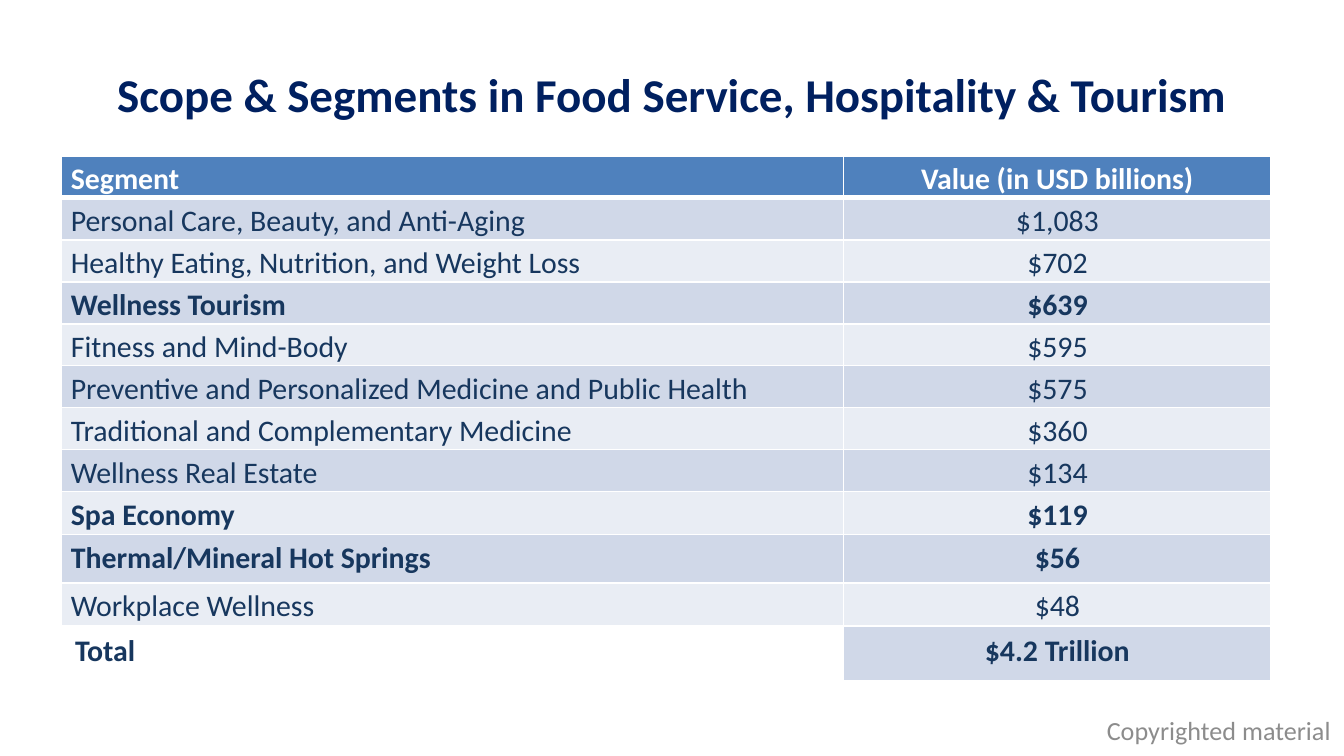
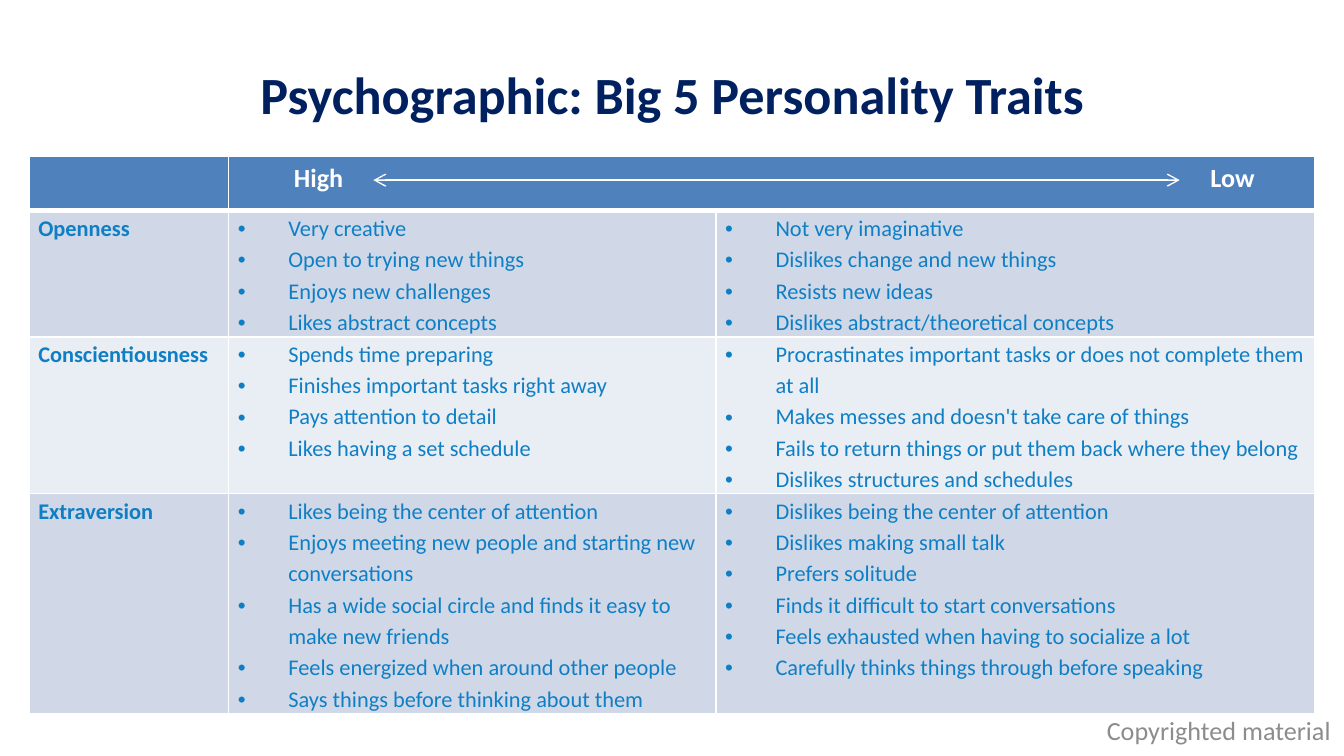
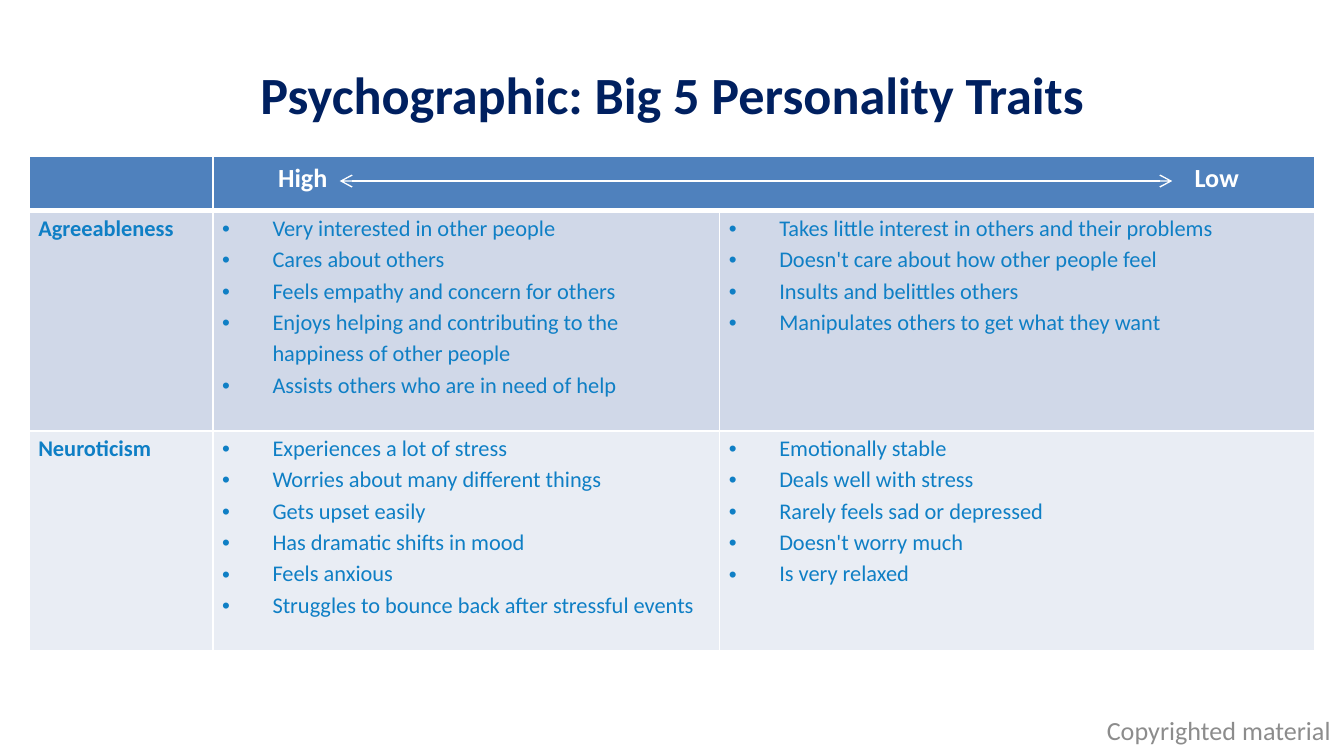
from lxml.etree import SubElement
from pptx import Presentation
from pptx.dml.color import RGBColor
from pptx.enum.shapes import MSO_CONNECTOR
from pptx.enum.text import MSO_ANCHOR, PP_ALIGN
from pptx.oxml.ns import qn
from pptx.util import Pt

FONT = "Calibri"
NAVY, INK, BLUE = "002060", "17375E", "0F7FC5"
GREY, WHITE, HEAD = "8C8C8C", "FFFFFF", "4F81BD"
BANDS = ("D0D8E8", "E9EDF4")
LEFT, MID, RIGHT, FULL = PP_ALIGN.LEFT, PP_ALIGN.CENTER, PP_ALIGN.RIGHT, PP_ALIGN.JUSTIFY
TOP = 83.5

SEGMENTS = [
    ("Personal Care, Beauty, and Anti-Aging", "$1,083"),
    ("Healthy Eating, Nutrition, and Weight Loss", "$702"),
    ("Wellness Tourism", "$639"),
    ("Fitness and Mind-Body", "$595"),
    ("Preventive and Personalized Medicine and Public Health", "$575"),
    ("Traditional and Complementary Medicine", "$360"),
    ("Wellness Real Estate", "$134"),
    ("Spa Economy", "$119"),
    ("Thermal/Mineral Hot Springs", "$56"),
    ("Workplace Wellness", "$48"),
]
STRONG = {"Wellness Tourism", "Spa Economy", "Thermal/Mineral Hot Springs"}

FIRST = [
    ("Openness",
     ["Very creative", "Open to trying new things", "Enjoys new challenges",
      "Likes abstract concepts"],
     ["Not very imaginative", "Dislikes change and new things", "Resists new ideas",
      "Dislikes abstract/theoretical concepts"]),
    ("Conscientiousness",
     ["Spends time preparing", "Finishes important tasks right away",
      "Pays attention to detail", "Likes having a set schedule"],
     ["Procrastinates important tasks or does not complete them at all",
      "Makes messes and doesn't take care of things",
      "Fails to return things or put them back where they belong",
      "Dislikes structures and schedules"]),
    ("Extraversion",
     ["Likes being the center of attention",
      "Enjoys meeting new people and starting new conversations",
      "Has a wide social circle and finds it easy to make new friends",
      "Feels energized when around other people",
      "Says things before thinking about them"],
     ["Dislikes being the center of attention", "Dislikes making small talk",
      "Prefers solitude", "Finds it difficult to start conversations",
      "Feels exhausted when having to socialize a lot",
      "Carefully thinks things through before speaking"]),
]
SECOND = [
    ("Agreeableness",
     ["Very interested in other people", "Cares about others",
      "Feels empathy and concern for others",
      "Enjoys helping and contributing to the happiness of other people",
      "Assists others who are in need of help"],
     ["Takes little interest in others and their problems",
      "Doesn't care about how other people feel", "Insults and belittles others",
      "Manipulates others to get what they want"]),
    ("Neuroticism",
     ["Experiences a lot of stress", "Worries about many different things",
      "Gets upset easily", "Has dramatic shifts in mood", "Feels anxious",
      "Struggles to bounce back after stressful events"],
     ["Emotionally stable", "Deals well with stress", "Rarely feels sad or depressed",
      "Doesn't worry much", "Is very relaxed"]),
]


def paint(target, color):
    """Give a fill, or a line's fill, one solid colour."""
    target.solid()
    target.fore_color.rgb = RGBColor.from_string(color)


def edge(cell, side, width):
    props = cell._tc.get_or_add_tcPr()
    line = SubElement(props, qn("a:ln" + side), w=str(Pt(width)))
    SubElement(SubElement(line, qn("a:solidFill")), qn("a:srgbClr"), val=WHITE)


class Deck:
    def __init__(self):
        self.file = Presentation()
        self.file.slide_width, self.file.slide_height = Pt(720), Pt(405)

    def page(self, title, size):
        self.slide = self.file.slides.add_slide(self.file.slide_layouts[6])
        self.label("Copyrighted material", (543.5, 379, 176.5, 24.5), 14, GREY, RIGHT)
        self.label(title, (36, 16.5, 648, 67.5), size, NAVY, MID, True)

    def typeset(self, frame, lines, size, color, align=LEFT, bold=False, space=None, dots=False):
        for i, line in enumerate(lines):
            para = frame.add_paragraph() if i else frame.paragraphs[0]
            para.alignment, para.line_spacing = align, space
            run = para.add_run()
            run.text = line
            for name, value in {"name": FONT, "size": Pt(size), "bold": bold}.items():
                setattr(run.font, name, value)
            paint(run.font.fill, color)
            if dots:
                props = para._p.get_or_add_pPr()
                props.set("marL", str(Pt(27)))
                props.set("indent", str(Pt(-27)))
                SubElement(props, qn("a:buFont"), typeface="Arial")
                SubElement(props, qn("a:buChar"), char="•")

    def label(self, text, box, size, color, align, bold=False):
        frame = self.slide.shapes.add_textbox(*map(Pt, box)).text_frame
        frame.word_wrap = True
        frame.vertical_anchor = MSO_ANCHOR.MIDDLE
        self.typeset(frame, [text], size, color, align, bold)

    def grid(self, left, cols, rows):
        """Add a table with white rules, a header fill and banded rows."""
        table = self.slide.shapes.add_table(
            len(rows), len(cols), Pt(left), Pt(TOP), Pt(sum(cols)), Pt(sum(rows))).table
        table.first_row = table.horz_banding = False
        for col, width in zip(table.columns, cols):
            col.width = Pt(width)
        for r, height in enumerate(rows):
            table.rows[r].height = Pt(height)
            for cell in table.rows[r].cells:
                for side in "LRTB":
                    edge(cell, side, 3 if (r, side) in ((0, "B"), (1, "T")) else 1)
                paint(cell.fill, BANDS[(r - 1) % 2] if r else HEAD)
        return table

    def entry(self, cell, lines, *look, tight=True, **more):
        """Fill a cell; a tight one has small insets and open lines."""
        if tight:
            insets = {"left": 5, "right": 5, "top": 0, "bottom": 0}
            for side, value in insets.items():
                setattr(cell, "margin_" + side, Pt(value))
            more["space"] = 1.15
        self.typeset(cell.text_frame, lines, *look, **more)

    def arrow(self, start, end, y):
        line = self.slide.shapes.add_connector(
            MSO_CONNECTOR.STRAIGHT, Pt(start), Pt(y), Pt(end), Pt(y))
        line.line.width = Pt(0.75)
        paint(line.line.fill, WHITE)
        outline = line._element.spPr.find(qn("a:ln"))
        for tip in ("a:headEnd", "a:tailEnd"):
            SubElement(outline, qn(tip), type="arrow")
        SubElement(line._element.spPr, qn("a:effectLst"))

    def market(self):
        self.page("Scope & Segments in Food Service, Hospitality & Tourism", 25.2)
        table = self.grid(33, (419, 229), [22.5] * 8 + [23, 26, 23, 29.5])
        rows = [("Segment", "Value (in USD billions)"), *SEGMENTS, ("Total", "$4.2 Trillion")]
        last = len(rows) - 1
        for r, row in enumerate(rows):
            bold = r in (0, last) or row[0] in STRONG
            for c, text in enumerate(row):
                self.entry(table.cell(r, c), [text], 16, INK if r else WHITE,
                           MID if c else FULL, bold, tight=r < last)
        table.cell(last, 0).fill.background()

    def traits(self, cols, rows, data, line):
        self.page("Psychographic: Big 5 Personality Traits", 28)
        table = self.grid(15.5, cols, rows)
        head = table.cell(0, 1)
        head.merge(table.cell(0, 2))
        head.margin_left = Pt(35)
        self.entry(head, ["High\tLow"], 14, WHITE, LEFT, True, tight=False)
        props = head.text_frame.paragraphs[0]._p.get_or_add_pPr()
        SubElement(SubElement(props, qn("a:tabLst")), qn("a:tab"), pos=str(Pt(491)), algn="l")
        for r, (name, *sides) in enumerate(data, 1):
            self.entry(table.cell(r, 0), [name], 12, BLUE, LEFT, True)
            for c, points in enumerate(sides, 1):
                self.entry(table.cell(r, c), points, 12, BLUE, dots=True)
        self.arrow(*line)


def main():
    deck = Deck()
    deck.market()
    deck.traits((107, 261, 321), (29.5, 67.5, 84, 118), FIRST, (200, 632, 96.5))
    deck.traits((98.5, 271.5, 319), (29.5, 118, 117.5), SECOND, (182, 628, 97))
    deck.file.save("out.pptx")


if __name__ == "__main__":
    main()
